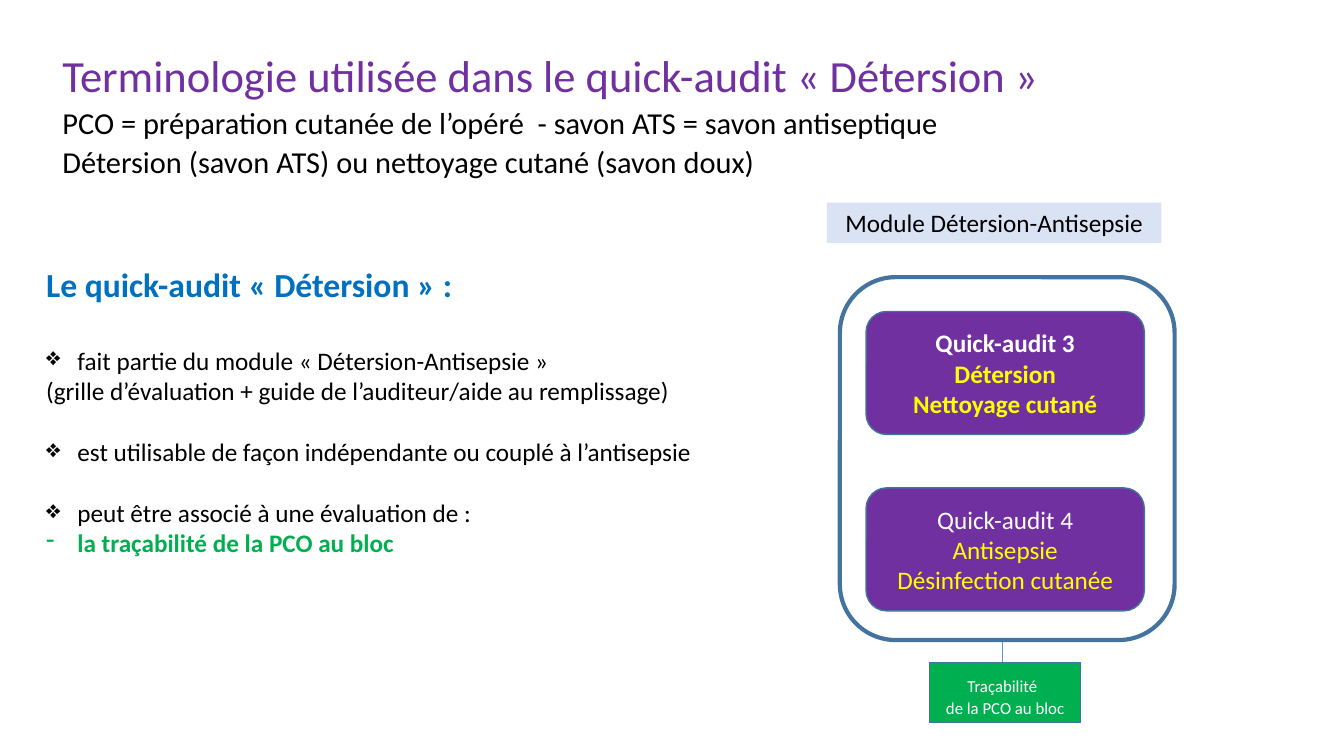
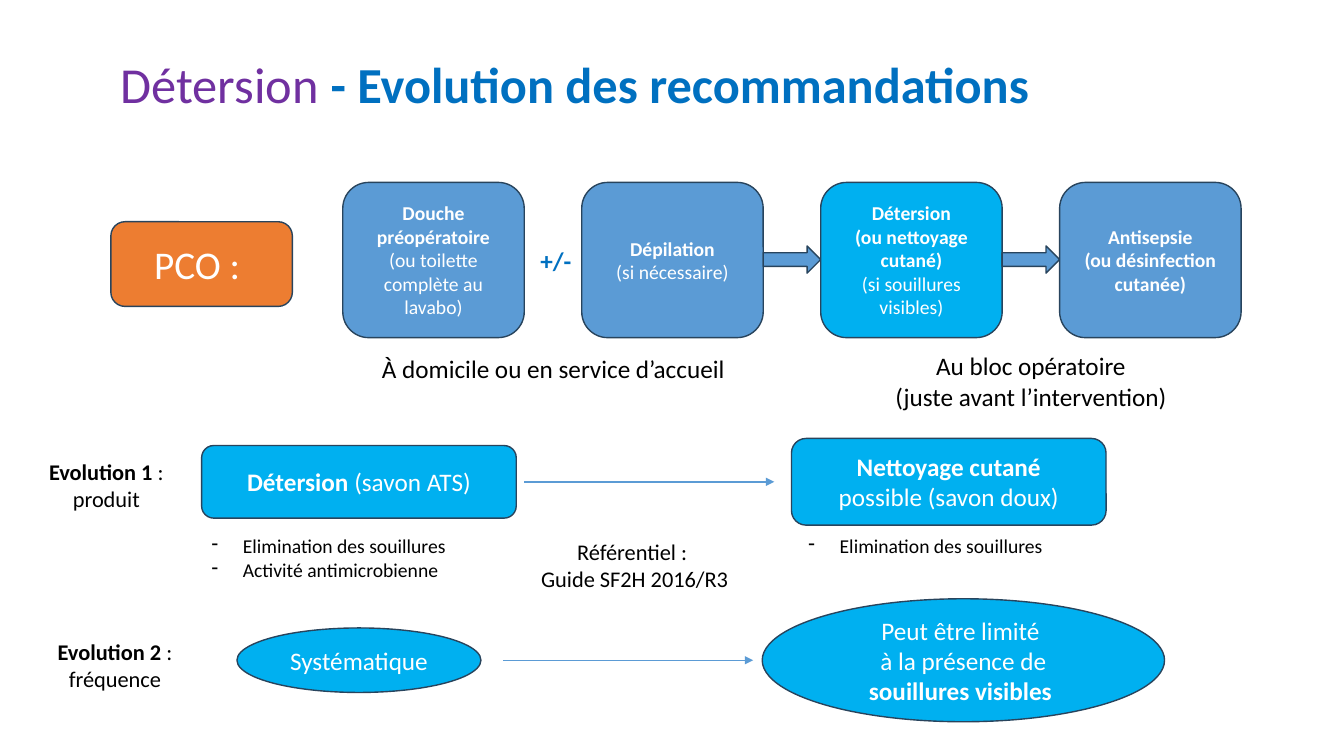
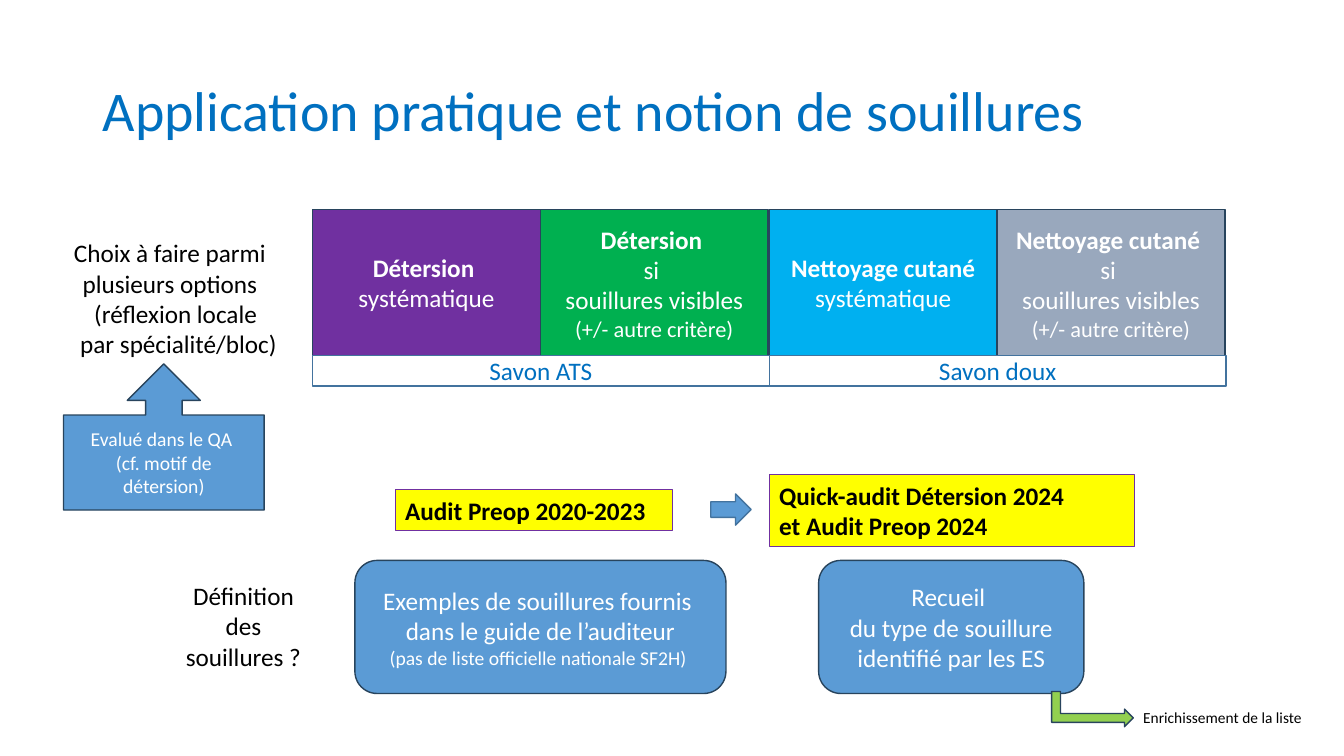
from lxml.etree import SubElement as Sub
from pptx import Presentation as Deck
from pptx.dml.color import RGBColor as Rgb
from pptx.enum.shapes import MSO_CONNECTOR as Link, MSO_SHAPE as Kind
from pptx.enum.text import MSO_ANCHOR as Anchor, PP_ALIGN as Align
from pptx.oxml.ns import qn
from pptx.util import Pt

PX = 9144
FACE = "Calibri"
HUES = {
    "black": "000000", "white": "FFFFFF", "purple": "7030A0",
    "blue": "0070C0", "sky": "00B0F0", "steel": "5B9BD5",
    "navy": "28445D", "edge": "43739E", "pale": "DAE3F3",
    "green": "00B050", "lime": "92D050", "yellow": "FFFF00",
    "orange": "ED7D31", "gray": "99A8BD",
}


def hue(name):
    """Look up a named colour."""
    return Rgb.from_string(HUES[name])


def emu(*sizes):
    """Turn px into EMU."""
    return [size * PX for size in sizes]


def bold(text, **form):
    """Describe a bold run."""
    return text, dict(form, bold=True)


def row(*runs, mark=None, shift=0, **form):
    """Describe a paragraph of one or more runs."""
    return runs, mark, shift, form


def style(font, color, **form):
    """Format one font."""
    font.color.rgb = hue(color)
    form["size"] = Pt(form["size"])
    for key, value in form.items():
        setattr(font, key, value)


def indent(para, mark, shift):
    """Indent a paragraph and give it a bullet."""
    props = para._p.get_or_add_pPr()
    if mark:
        props.set("marL", str(31 * PX))
        props.set("indent", str(-31 * PX))
        Sub(props, qn("a:buChar"), char=mark)
    elif shift:
        props.set("marL", str(shift * PX))


def write(frame, rows, align=Align.LEFT, **base):
    """Fill a text frame with paragraphs."""
    frame.word_wrap = True
    look = dict(name=FACE, size=18, color="black", bold=False) | base
    for pos, item in enumerate(rows):
        para = frame.add_paragraph() if pos else frame.paragraphs[0]
        runs, mark, shift, form = row(item) if isinstance(item, str) else item
        for key, value in dict(form, alignment=align).items():
            setattr(para, key, value)
        indent(para, mark, shift)
        for part in runs:
            text, extra = (part, {}) if isinstance(part, str) else part
            run = para.add_run()
            run.text = text
            style(run.font, **look | extra)


def note(slide, box, *rows, **form):
    """Add a free text box."""
    shape = slide.shapes.add_textbox(*emu(*box))
    write(shape.text_frame, rows, **form)
    return shape


def label(slide, box, *rows, **form):
    """Add a centred text box."""
    return note(slide, box, *rows, align=Align.CENTER, **form)


def title(slide, box, *runs, **form):
    """Add the slide title."""
    shape = note(slide, box, row(*runs, line_spacing=0.9), **form)
    shape.text_frame.vertical_anchor = Anchor.MIDDLE


def block(slide, kind, box, fill, *rows, edge="navy", width=1,
          align=Align.CENTER, color="white", **form):
    """Add a preset shape with its text."""
    shape = slide.shapes.add_shape(kind, *emu(*box))
    shape.shadow.inherit = False
    if fill:
        shape.fill.solid()
        shape.fill.fore_color.rgb = hue(fill)
    else:
        shape.fill.background()
    if edge:
        shape.line.color.rgb = hue(edge)
        shape.line.width = Pt(width)
    else:
        shape.line.fill.background()
    frame = shape.text_frame
    frame.vertical_anchor = Anchor.MIDDLE
    write(frame, rows, align=align, color=color, **form)
    return shape


def line(slide, ends, width=1, arrow=True):
    """Draw a straight line, with an arrowhead if asked."""
    link = slide.shapes.add_connector(Link.STRAIGHT, *emu(*ends))
    link.line.color.rgb = hue("steel")
    link.line.width = Pt(width)
    if arrow:
        Sub(link.line._get_or_add_ln(), qn("a:tailEnd"), type="triangle")
    Sub(link._element.spPr, qn("a:effectLst"))


def terms(slide):
    """Build the slide on terminology."""
    note(slide, (52, 57, 1229, 129),
         row(("Terminologie utilisée dans le quick-audit « Détersion »",
              dict(size=31.8, color="purple")), line_spacing=0.7),
         *[row(text, line_spacing=0.7, space_before=Pt(10)) for text in (
             "PCO = préparation cutanée de l’opéré  - savon ATS = savon antiseptique",
             "Détersion (savon ATS) ou nettoyage cutané (savon doux)")],
         size=21.7)
    note(slide, (36, 257, 713, 303),
         row(bold("Le quick-audit « Détersion » :", size=24, color="blue")),
         row("fait partie du module « Détersion-Antisepsie »",
             mark="❖", space_before=Pt(29)),
         "(grille d’évaluation + guide de l’auditeur/aide au remplissage)",
         row("est utilisable de façon indépendante ou couplé à l’antisepsie",
             mark="❖", space_before=Pt(22)),
         row("peut être associé à une évaluation de :",
             mark="❖", space_before=Pt(22)),
         row(bold("la traçabilité de la PCO au bloc", color="green"), mark="-"))
    block(slide, Kind.RECTANGLE, (820, 201, 332, 40), "pale",
          "Module Détersion-Antisepsie", edge=None, color="black")
    line(slide, (994, 637, 994, 674), width=0.5, arrow=False)
    audits = (
        (309, True, "Quick-audit 3", "Détersion", "Nettoyage cutané"),
        (484, False, "Quick-audit 4", "Antisepsie", "Désinfection cutanée"),
    )
    for top, heavy, head, *tail in audits:
        block(slide, Kind.ROUNDED_RECTANGLE, (859, top, 276, 122), "purple",
              head, *[row((text, dict(color="yellow"))) for text in tail],
              edge="edge", bold=heavy)
    block(slide, Kind.ROUNDED_RECTANGLE, (833, 275, 332, 360), None,
          edge="edge", width=3)
    block(slide, Kind.RECTANGLE, (922, 657, 150, 60), "green",
          row("Traçabilité", (" ", dict(size=18))), "de la PCO au bloc",
          edge="edge", size=12)


def trends(slide):
    """Build the slide on changing recommendations."""
    title(slide, (110, 14, 1150, 145), ("Détersion ", dict(color="purple")),
          bold("- Evolution des recommandations"), size=36, color="blue")
    block(slide, Kind.ROUNDED_RECTANGLE, (110, 220, 180, 84), "orange",
          "PCO : ", size=28)
    steps = (
        ("steel", row(bold("Douche préopératoire")),
         "(ou toilette complète au lavabo)"),
        ("steel", row(bold("Dépilation")), "(si nécessaire)"),
        ("sky", row(bold("Détersion")), row(bold("(ou nettoyage cutané)")),
         "(si souillures visibles)"),
        ("steel", row(bold("Antisepsie")),
         row(bold("(ou désinfection cutanée)"))),
    )
    for pos, (fill, *rows) in enumerate(steps):
        left = 340 + 237 * pos
        block(slide, Kind.ROUNDED_RECTANGLE, (left, 181, 180, 154), fill,
              *rows, size=14)
        if pos in (1, 2):
            block(slide, Kind.RIGHT_ARROW, (left + 180, 244, 57, 27), "steel")
    note(slide, (526, 238, 59, 40), "+/-", color="blue", bold=True)
    note(slide, (369, 346, 364, 40), "À domicile ou en service d’accueil")
    label(slide, (871, 343, 303, 71), "Au bloc opératoire",
          "(juste avant l’intervention)")
    label(slide, (18, 450, 175, 64),
          row(bold("Evolution 1 "), ": produit"), size=16)
    label(slide, (33, 628, 162, 64),
          row(bold("Evolution 2"), " : fréquence"), size=16)
    block(slide, Kind.ROUNDED_RECTANGLE, (200, 442, 312, 72), "sky",
          row(bold("Détersion "), "(savon ATS)"))
    block(slide, Kind.ROUNDED_RECTANGLE, (785, 435, 312, 86), "sky",
          row(bold("Nettoyage cutané")), "possible (savon doux)")
    block(slide, Kind.OVAL, (235, 623, 242, 64), "sky", "Systématique")
    block(slide, Kind.OVAL, (756, 594, 399, 122), "sky", "Peut être limité ",
          row("à la présence de ", bold("souillures visibles ")))
    for ends in ((520, 478, 768, 478), (499, 655, 747, 655)):
        line(slide, ends)
    goals = "Elimination des souillures", "Activité antimicrobienne"
    for left, texts in ((200, goals), (792, goals[:1])):
        note(slide, (left, 525, 413, 57),
             *[row(text, mark="-") for text in texts], size=14)
    label(slide, (526, 529, 207, 64), "Référentiel : ", "Guide SF2H 2016/R3",
          size=16)


def usage(slide):
    """Build the slide on practical use."""
    title(slide, (92, 40, 1150, 145),
          "Application pratique et notion de souillures",
          size=40, color="blue")
    soiled = ("si ", "souillures visibles",
              row(("(+/- autre critère)", dict(size=16))))
    cells = (
        ("purple", "Détersion ", "systématique"),
        ("green", "Détersion ", *soiled),
        ("sky", "Nettoyage cutané", "systématique"),
        ("gray", "Nettoyage cutané ", *soiled),
    )
    for pos, (fill, head, *rows) in enumerate(cells):
        block(slide, Kind.RECTANGLE, (310 + 453 * pos // 2, 208, 226, 145),
              fill, row(bold(head)), *rows)
    for pos, text in enumerate(("Savon ATS", "Savon doux")):
        block(slide, Kind.RECTANGLE, (310 + 453 * pos, 353, 453, 30), "white",
              text, edge="edge", color="blue")
    label(slide, (41, 231, 255, 131), "Choix à faire parmi plusieurs options",
          row("(réflexion locale ", shift=17),
          row("par spécialité/bloc)", shift=17))
    block(slide, Kind.UP_ARROW_CALLOUT, (63, 361, 199, 145), "steel",
          "Evalué dans le QA ", "(cf. motif de détersion)", size=14)
    audits = (
        ((392, 486, 275, 40), "Audit Preop 2020-2023"),
        ((763, 471, 362, 71), "Quick-audit Détersion 2024",
         "et Audit Preop 2024"),
    )
    for box, *rows in audits:
        block(slide, Kind.RECTANGLE, box, "yellow", *rows, edge="purple",
              width=0.75, align=Align.LEFT, color="black", bold=True)
    block(slide, Kind.RIGHT_ARROW, (705, 490, 40, 31), "steel", edge="edge")
    label(slide, (168, 571, 147, 101), "Définition des souillures ?")
    block(slide, Kind.ROUNDED_RECTANGLE, (352, 556, 368, 132), "steel",
          "Exemples de souillures fournis ", "dans le guide de l’auditeur",
          row(("(pas de liste officielle nationale SF2H) ", dict(size=14))))
    block(slide, Kind.ROUNDED_RECTANGLE, (812, 556, 263, 132), "steel",
          "Recueil ", "du type de souillure identifié par les ES")
    bend = block(slide, Kind.BENT_UP_ARROW, (1066, 663, 35, 81), "lime")
    bend.rotation = 90
    note(slide, (1124, 698, 194, 29), "Enrichissement de la liste", size=11)


def main():
    """Build and save the deck."""
    deck = Deck()
    deck.slide_width, deck.slide_height = emu(1333, 750)
    for build in (terms, trends, usage):
        build(deck.slides.add_slide(deck.slide_layouts[6]))
    deck.save("out.pptx")


if __name__ == "__main__":
    main()
